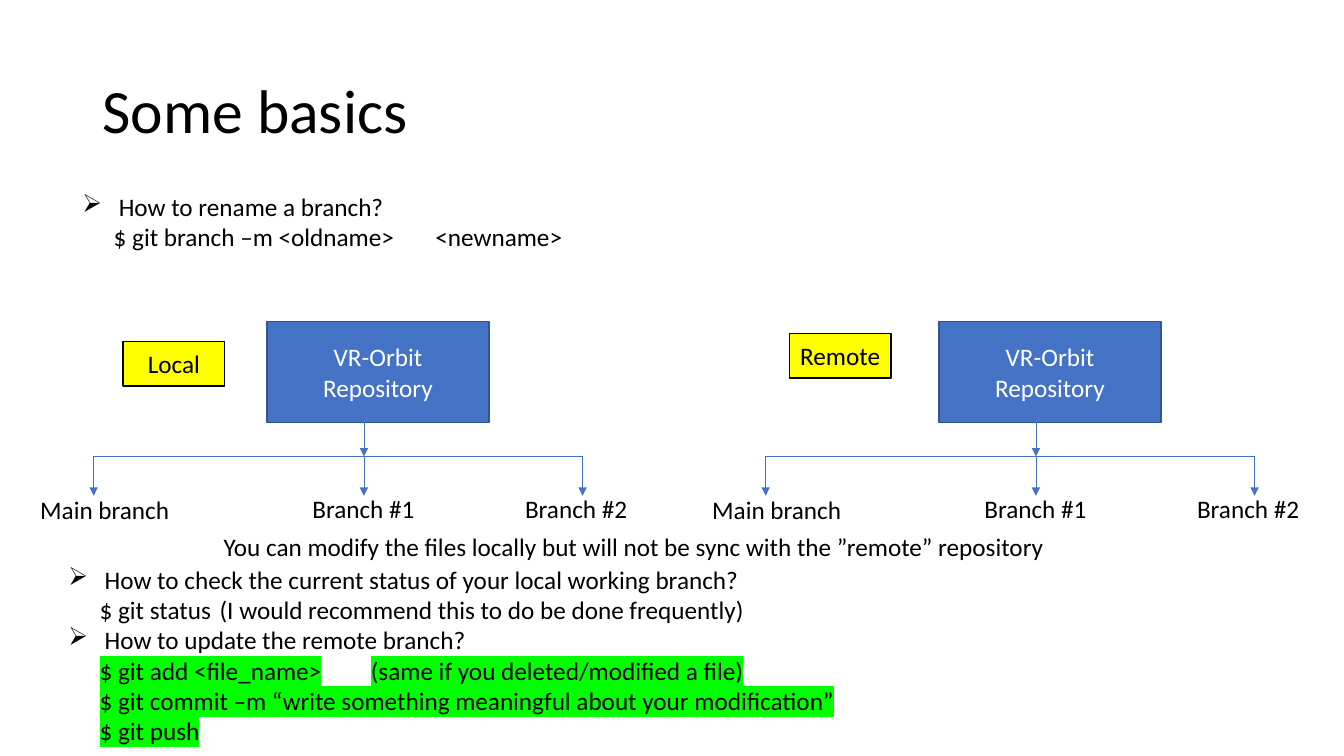
from lxml import etree
from pptx import Presentation
from pptx.dml.color import RGBColor
from pptx.enum.shapes import MSO_CONNECTOR, MSO_SHAPE
from pptx.enum.text import MSO_ANCHOR, PP_ALIGN
from pptx.oxml.ns import qn
from pptx.util import Inches, Pt

BLACK = RGBColor(0x00, 0x00, 0x00)
WHITE = RGBColor(0xFF, 0xFF, 0xFF)
BLUE = RGBColor(0x44, 0x72, 0xC4)
DARK_BLUE = RGBColor(0x32, 0x54, 0x91)
YELLOW = RGBColor(0xFF, 0xFF, 0x00)
GREEN = RGBColor(0x00, 0xFF, 0x00)

STRAIGHT = MSO_CONNECTOR.STRAIGHT
RECTANGLE = MSO_SHAPE.RECTANGLE
LEFT, CENTER = PP_ALIGN.LEFT, PP_ALIGN.CENTER
TOP, MIDDLE = MSO_ANCHOR.TOP, MSO_ANCHOR.MIDDLE

# The slide is 40 square units wide and 22.5 high
COLUMNS = 40
HALF = COLUMNS / 2
INDENT = Inches(0.31)
HANGING = Inches(0.36)


def write(para, text, size=18, color=BLACK, font="Calibri", align=LEFT,
          spacing=1.0, highlight=None):
    para.alignment = align
    para.line_spacing = spacing
    para.text = text
    for span in para.runs:
        span.font.size = Pt(size)
        span.font.name = font
        span.font.color.rgb = color
        if highlight is not None:
            mark = etree.Element(qn("a:highlight"))
            etree.SubElement(mark, qn("a:srgbClr"), val=str(highlight))
            span.font._element.find(qn("a:solidFill")).addnext(mark)


class BranchSlide:
    def __init__(self, deck):
        self.page = deck.slides.add_slide(deck.slide_layouts[6])
        self.unit = deck.slide_width / COLUMNS

    def place(self, *lengths):
        return [round(length * self.unit) for length in lengths]

    def text(self, area, text, wrap=False, anchor=TOP, **style):
        box = self.page.shapes.add_textbox(*self.place(*area))
        box.text_frame.word_wrap = wrap
        box.text_frame.vertical_anchor = anchor
        write(box.text_frame.paragraphs[0], text, **style)
        return box

    def rectangle(self, area, text, fill, line, color, wrap=True):
        box = self.page.shapes.add_shape(RECTANGLE, *self.place(*area))
        box.shadow.inherit = False
        box.fill.solid()
        box.fill.fore_color.rgb = fill
        box.line.color.rgb = line
        box.line.width = Pt(1)
        box.text_frame.word_wrap = wrap
        box.text_frame.vertical_anchor = MIDDLE
        write(box.text_frame.paragraphs[0], text, color=color, align=CENTER)

    def line(self, start, end, arrow=True):
        line = self.page.shapes.add_connector(
            STRAIGHT, *self.place(*start, *end))
        line.line.color.rgb = BLUE
        line.line.width = Pt(0.5)
        if arrow:
            etree.SubElement(line.line._get_or_add_ln(), qn("a:tailEnd"),
                             type="triangle")
        etree.SubElement(line._element.spPr, qn("a:effectLst"))

    def questions(self, area, entries):
        """Entries are (text, tab stop in inches, highlight); questions end in ?"""
        box = self.page.shapes.add_textbox(*self.place(*area))
        frame = box.text_frame
        frame.word_wrap = True
        for index, (text, stop, highlight) in enumerate(entries):
            para = frame.add_paragraph() if index else frame.paragraphs[0]
            props = para._p.get_or_add_pPr()
            if text.endswith("?"):
                props.set("marL", str(HANGING))
                props.set("indent", str(-HANGING))
                etree.SubElement(props, qn("a:buChar"), char="➢")
            else:
                props.set("marL", "0")
                props.set("indent", str(INDENT))
                etree.SubElement(props, qn("a:buNone"))
            if stop:
                tabs = etree.SubElement(props, qn("a:tabLst"))
                etree.SubElement(tabs, qn("a:tab"), pos=str(Inches(stop)),
                                 algn="l")
            write(para, text, highlight=highlight)

    def repository(self, left, tag, tag_left, tag_top):
        trunk, bus, tips = left + 10.83, 13.59, 14.76
        ends = left + 2.79, left + 17.34
        # Repository box and its tag
        self.rectangle((left + 7.95, 9.57, 6.6, 3), "VR-Orbit\vRepository",
                       BLUE, DARK_BLUE, WHITE)
        self.rectangle((left + tag_left, tag_top, 3.03, 1.32), tag,
                       YELLOW, BLACK, BLACK, wrap=False)
        # Tree of arrows
        self.line((trunk, 12.45), (trunk, bus))
        self.line((ends[0], bus), (ends[1], bus), arrow=False)
        for tip in (ends[0], trunk, ends[1]):
            self.line((tip, bus), (tip, tips))
        # Branch names
        for name, column, row, width in (("Main branch", 0.9, 14.58, 4.5),
                                         ("Branch #1", 9, 14.55, 3.69),
                                         ("Branch #2", 15.33, 14.55, 3.69)):
            self.text((left + column, row, width, 1.2), name)


def main():
    deck = Presentation()
    deck.slide_width, deck.slide_height = Inches(13.33), Inches(7.5)
    slide = BranchSlide(deck)

    # Title and first question
    slide.text((2.76, 1.2, 34.5, 4.35), "Some basics", wrap=True,
               anchor=MIDDLE, size=44, spacing=0.9)
    slide.questions((2.16, 5.55, 15, 2.13), [
        ("How to rename a branch?", None, None),
        ("$ git branch –m <oldname>\t<newname>", 3.21, None),
    ])

    # Local and remote trees
    slide.repository(0, "Local", 3.66, 10.17)
    slide.repository(HALF, "Remote", 3.49, 9.93)
    slide.text((6.36, 15.66, 25.32, 1.2),
               "You can modify the files locally but will not be sync "
               "with the ”remote” repository")

    # Status and update questions
    slide.questions((1.74, 16.65, 25, 5.8), [
        ("How to check the current status of your local working branch?",
         None, None),
        ("$ git status\t(I would recommend this to do be done frequently)",
         1.81, None),
        ("How to update the remote branch?", None, None),
        ("$ git add <file_name>\t(same if you deleted/modified a file)",
         2.79, GREEN),
        ("$ git commit –m “write something meaningful about your modification”",
         None, GREEN),
        ("$ git push", None, GREEN),
    ])
    deck.save("out.pptx")


if __name__ == "__main__":
    main()
